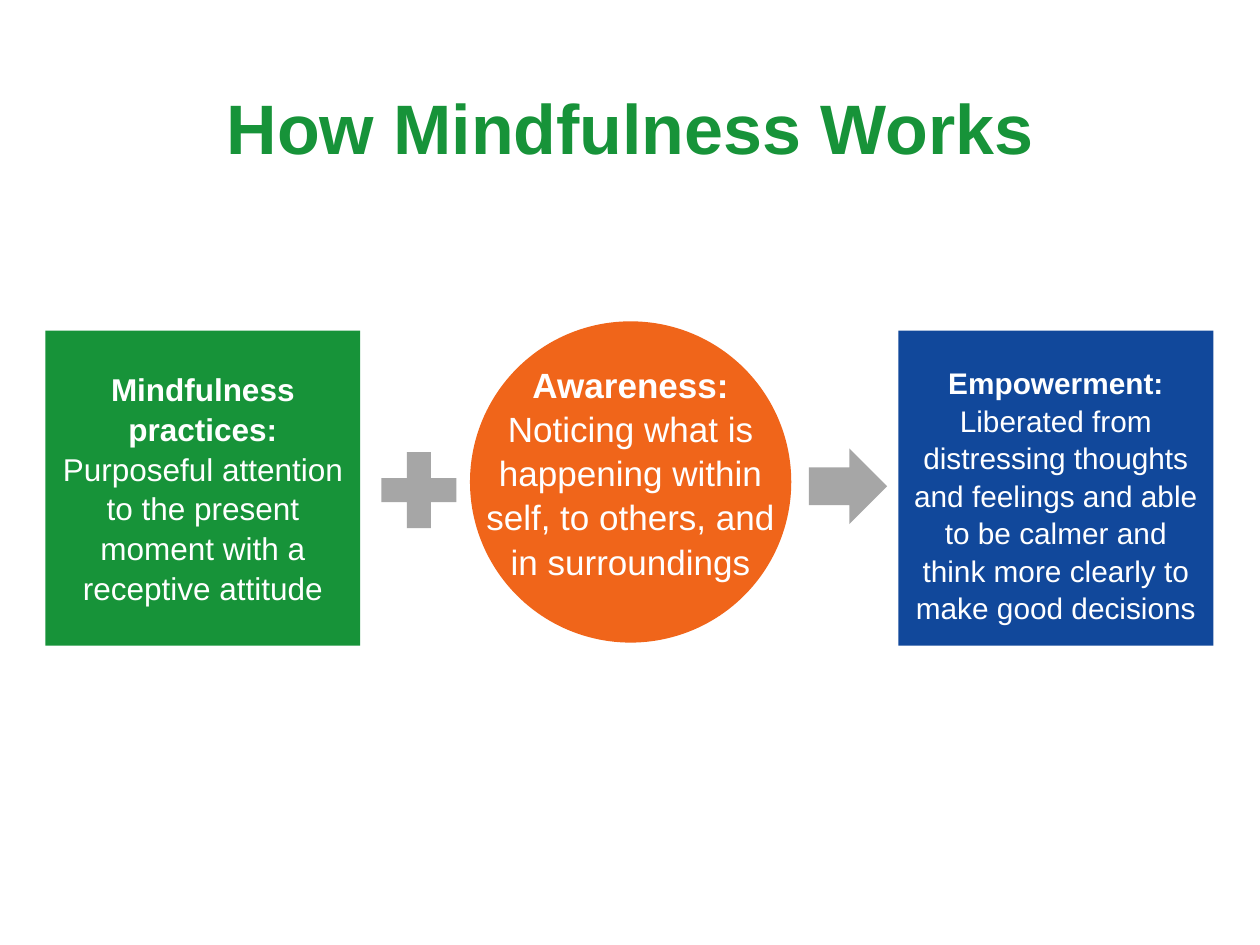
from dataclasses import dataclass
from pptx import Presentation
from pptx.dml.color import RGBColor as RGB
from pptx.enum.shapes import MSO_SHAPE as Shape
from pptx.enum.text import MSO_ANCHOR as Anchor, PP_ALIGN as Align
from pptx.util import Inches, Pt


@dataclass(frozen=True)
class Theme:
    font: str = "Arial"
    green: str = "179339"
    orange: str = "F0651A"
    blue: str = "11489B"
    gray: str = "A6A6A6"
    white: str = "FFFFFF"
    title: int = 40
    large: int = 20
    medium: int = 18
    small: int = 17
    leading: float = 1.05


T = Theme()
W, H = 10, 7.5
SQUARE, CIRCLE = W * 0.25, W * 0.255
SQUARE_TOP, CIRCLE_TOP = H * 0.35, H * 0.34
STEPS = [
    (Shape.RECTANGLE, (0.36, SQUARE_TOP, SQUARE, SQUARE), 0.25, T.green, T.medium,
     "Mindfulness practices:",
     "Purposeful attention to the present moment with a receptive attitude"),
    (Shape.OVAL, (3.73, CIRCLE_TOP, CIRCLE, CIRCLE), 0.27, T.orange, T.large,
     "Awareness:",
     "Noticing what is happening within self, to others, and in surroundings"),
    (Shape.RECTANGLE, (7.13, SQUARE_TOP, SQUARE, SQUARE), 0.21, T.blue, T.small,
     "Empowerment:",
     "Liberated from distressing thoughts and feelings and able to be calmer "
     "and think more clearly to make good decisions"),
]
SIGNS = [
    (Shape.MATH_PLUS, (2.92, 3.48, 0.81, 0.82)),
    (Shape.RIGHT_ARROW, (6.42, 3.56, 0.62, 0.6)),
]


def inches(box):
    return [Inches(v) for v in box]


def add_run(p, text, size, color, bold):
    p.alignment = Align.CENTER
    r = p.add_run()
    r.text = text
    r.font.name, r.font.size, r.font.bold = T.font, Pt(size), bold
    r.font.color.rgb = RGB.from_string(color)


def add_title(s, box, text):
    sp = s.shapes.title
    sp.left, sp.top, sp.width, sp.height = inches(box)
    tf = sp.text_frame
    tf.vertical_anchor = Anchor.MIDDLE
    add_run(tf.paragraphs[0], text, T.title, T.green, True)


def add_solid(shapes, kind, box, color):
    sp = shapes.add_shape(kind, *inches(box))
    sp.shadow.inherit = False
    sp.fill.solid()
    sp.fill.fore_color.rgb = RGB.from_string(color)
    sp.line.fill.background()


def add_step(s, kind, box, drop, color, size, heading, body):
    x, y, w, h = box
    group = s.shapes.add_group_shape()
    add_solid(group.shapes, kind, box, color)
    tb = group.shapes.add_textbox(*inches((x - 0.01, y + drop, w + 0.02, 2.09)))
    tf = tb.text_frame
    tf.word_wrap = True
    for p, text, bold in ((tf.paragraphs[0], heading, True),
                          (tf.add_paragraph(), body, False)):
        p.line_spacing = T.leading
        add_run(p, text, size, T.white, bold)


def main():
    prs = Presentation()
    prs.slide_width, prs.slide_height = Inches(W), Inches(H)
    s = prs.slides.add_slide(prs.slide_layouts[5])
    add_title(s, (0, H * 0.05, W, H / 6), "How Mindfulness Works")
    for step in STEPS:
        add_step(s, *step)
    for kind, box in SIGNS:
        add_solid(s.shapes, kind, box, T.gray)
    prs.save("out.pptx")


if __name__ == "__main__":
    main()
